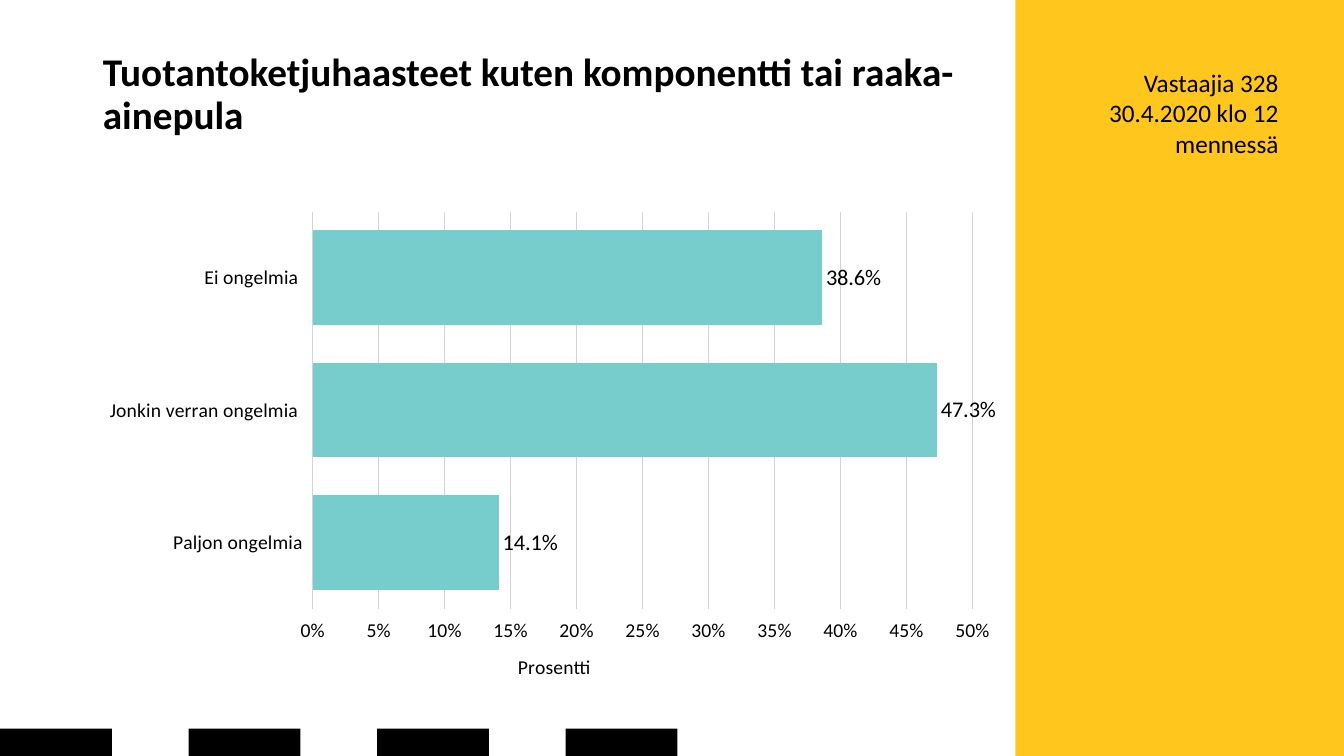
from dataclasses import dataclass

from lxml import etree
from pptx import Presentation
from pptx.chart.data import CategoryChartData
from pptx.dml.color import RGBColor
from pptx.enum.chart import XL_CHART_TYPE, XL_LABEL_POSITION, XL_TICK_LABEL_POSITION, XL_TICK_MARK
from pptx.enum.shapes import MSO_SHAPE
from pptx.enum.text import MSO_ANCHOR, PP_ALIGN
from pptx.oxml.ns import qn
from pptx.util import Inches, Pt

RECTANGLE = MSO_SHAPE.RECTANGLE
LEFT, RIGHT = PP_ALIGN.LEFT, PP_ALIGN.RIGHT
MIDDLE = MSO_ANCHOR.MIDDLE
BAR_CLUSTERED = XL_CHART_TYPE.BAR_CLUSTERED
OUTSIDE_END = XL_LABEL_POSITION.OUTSIDE_END
CROSS = XL_TICK_MARK.CROSS
HIGH = XL_TICK_LABEL_POSITION.HIGH


@dataclass(frozen=True)
class Theme:
    font: str = "Calibri"
    ink: RGBColor = RGBColor(0x00, 0x00, 0x00)
    panel: RGBColor = RGBColor(0xFF, 0xC6, 0x1E)
    bar: RGBColor = RGBColor(0x77, 0xCD, 0xCB)
    grid: RGBColor = RGBColor(0xD3, 0xD3, 0xD3)
    title_size: Pt = Pt(28)
    body_size: Pt = Pt(18)
    value_size: Pt = Pt(16)
    axis_size: Pt = Pt(14)


THEME = Theme()
SLIDE_WIDTH, SLIDE_HEIGHT = 13.33, 7.5
MARGIN = 0.92
PANEL_LEFT = 10.07
BLOCK_COUNT, BLOCK_STEP = 4, 1.87
BLOCK_WIDTH, BLOCK_HEIGHT = 1.11, 0.27

ANSWERS = {
    "Ei ongelmia ": 0.386,
    "Jonkin verran ongelmia ": 0.473,
    "Paljon ongelmia": 0.141,
}


def box(left, top, width, height):
    return [Inches(length) for length in (left, top, width, height)]


def style_font(font, size, bold=False):
    font.name = THEME.font
    font.size = size
    font.bold = bold
    font.color.rgb = THEME.ink


def add_block(slide, area, colour):
    block = slide.shapes.add_shape(RECTANGLE, *box(*area))
    block.shadow.inherit = False
    block.fill.solid()
    block.fill.fore_color.rgb = colour
    block.line.fill.background()


def write_title(slide, wording, area):
    title = slide.shapes.title
    title.left, title.top, title.width, title.height = box(*area)
    title.text_frame.text = wording
    title.text_frame.vertical_anchor = MIDDLE
    heading = title.text_frame.paragraphs[0]
    heading.alignment = LEFT
    heading.line_spacing = 0.9
    style_font(heading.runs[0].font, THEME.title_size, bold=True)


def add_note(slide, wording, area):
    note = slide.shapes.add_textbox(*box(*area)).text_frame
    note.word_wrap = True
    note.text = wording
    for paragraph in note.paragraphs:
        paragraph.alignment = RIGHT
        style_font(paragraph.runs[0].font, THEME.body_size)


def fill_layout(layout, **shares):
    manual = etree.SubElement(layout, qn("c:manualLayout"))
    if "w" in shares:
        etree.SubElement(manual, qn("c:layoutTarget")).set("val", "inner")
    for mode in ("xMode", "yMode"):
        etree.SubElement(manual, qn(f"c:{mode}")).set("val", "edge")
    for side, share in shares.items():
        etree.SubElement(manual, qn(f"c:{side}")).set("val", str(share))


def place_plot(chart):
    plot_area = chart.element.find(".//" + qn("c:plotArea"))
    layout = plot_area.find(qn("c:layout"))
    if layout is None:
        layout = etree.Element(qn("c:layout"))
        plot_area.insert(0, layout)
    fill_layout(layout, x=0.24, y=0.02, w=0.72, h=0.79)


def style_axis(axis):
    axis.major_tick_mark = CROSS
    axis.minor_tick_mark = CROSS
    axis.format.line.fill.background()
    style_font(axis.tick_labels.font, THEME.axis_size)


def style_percent_axis(axis):
    style_axis(axis)
    axis.minimum_scale, axis.maximum_scale, axis.major_unit = 0, 0.5, 0.05
    axis.tick_label_position = HIGH
    axis.tick_labels.number_format = "0%"
    axis.tick_labels.number_format_is_linked = False
    axis.major_gridlines.format.line.color.rgb = THEME.grid
    axis.major_gridlines.format.line.width = Pt(1)
    axis.axis_title.text_frame.text = "Prosentti"
    caption = axis.axis_title.text_frame.paragraphs[0]
    style_font(caption.runs[0].font, THEME.axis_size)
    fill_layout(axis.axis_title.element.find(qn("c:layout")), x=0.46, y=0.89)


def style_bars(plot):
    plot.gap_width = 40
    plot.vary_by_categories = False
    bars = plot.series[0]
    bars.format.fill.solid()
    bars.format.fill.fore_color.rgb = THEME.bar
    bars.format.line.fill.background()
    labels = bars.data_labels
    labels.show_value = True
    labels.number_format = "0.0%"
    labels.number_format_is_linked = False
    labels.position = OUTSIDE_END
    style_font(labels.font, THEME.value_size)


def add_answer_chart(slide, area):
    answers = CategoryChartData()
    answers.categories = list(ANSWERS)
    answers.add_series("Series 1", list(ANSWERS.values()))
    chart = slide.shapes.add_chart(BAR_CLUSTERED, *box(*area), answers).chart
    chart.has_legend = False
    chart.has_title = False
    style_font(chart.font, THEME.body_size)
    style_axis(chart.category_axis)
    chart.category_axis.reverse_order = True
    style_percent_axis(chart.value_axis)
    style_bars(chart.plots[0])
    place_plot(chart)


def main():
    presentation = Presentation()
    presentation.slide_width = Inches(SLIDE_WIDTH)
    presentation.slide_height = Inches(SLIDE_HEIGHT)
    slide = presentation.slides.add_slide(presentation.slide_layouts[5])

    add_block(slide, (PANEL_LEFT, 0, SLIDE_WIDTH - PANEL_LEFT, SLIDE_HEIGHT), THEME.panel)
    for column in range(BLOCK_COUNT):
        area = (column * BLOCK_STEP, SLIDE_HEIGHT - BLOCK_HEIGHT, BLOCK_WIDTH, BLOCK_HEIGHT)
        add_block(slide, area, THEME.ink)

    write_title(
        slide,
        "Tuotantoketjuhaasteet kuten komponentti tai raaka-ainepula",
        (MARGIN, 0.4, 9.18, 1.09),
    )
    add_note(slide, "Vastaajia 328\n30.4.2020 klo 12 mennessä", (10.71, 0.62, 2.07, 1.01))
    add_answer_chart(slide, (MARGIN, 2, 9.09, 4.99))
    presentation.save("out.pptx")


if __name__ == "__main__":
    main()
